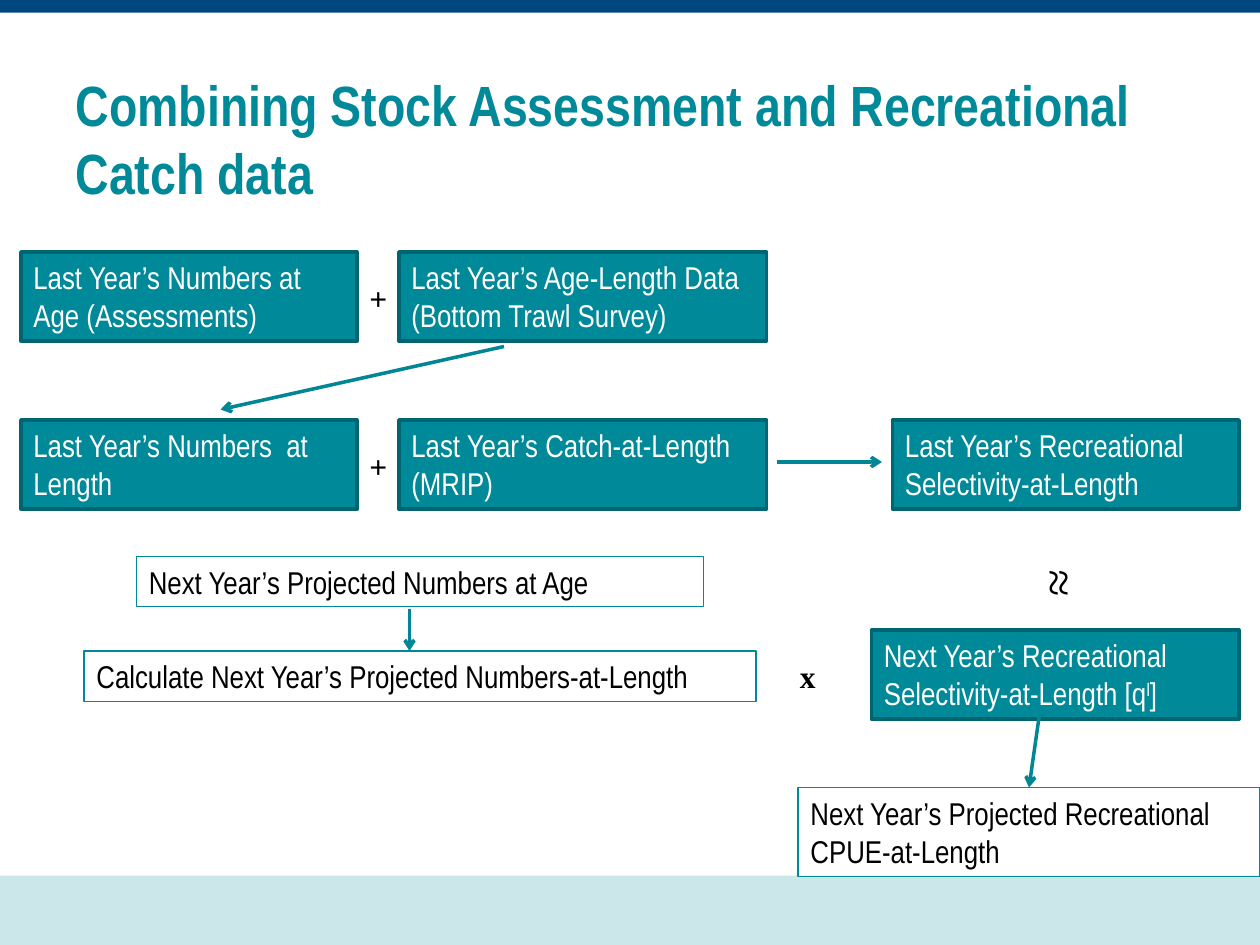
from dataclasses import dataclass

from lxml import etree
from pptx import Presentation
from pptx import util as u
from pptx.dml.color import RGBColor
from pptx.enum import shapes, text
from pptx.oxml import ns

COLS, ROWS = 120, 90
TALL, SHORT = 8.5, 4.8


@dataclass(frozen=True)
class Theme:
    teal: str = "008998"
    edge: str = "006570"
    arrow: str = "008695"
    navy: str = "00467F"
    pale: str = "CCE7EA"
    white: str = "FFFFFF"
    black: str = "000000"
    sans: str = "Arial Narrow"
    serif: str = "Times New Roman"
    title: float = 32.4
    body: float = 18
    symbol: float = 28


T = Theme()


def grid(prs, *cells):
    units = (prs.slide_width / COLS, prs.slide_height / ROWS)
    return [round(c * units[i % 2]) for i, c in enumerate(cells)]


def write(sp, content, size=T.body, font=T.sans, color=T.black, bold=False,
          align=text.PP_ALIGN.LEFT, wrap=True):
    tf = sp.text_frame
    tf.word_wrap = wrap
    tf.vertical_anchor = text.MSO_ANCHOR.TOP
    for i, line in enumerate(content.split("\n")):
        p = tf.paragraphs[0] if i == 0 else tf.add_paragraph()
        p.alignment = align
        for j, part in enumerate(line.split("^")):
            r = p.add_run()
            r.text = part
            r.font.size, r.font.name, r.font.bold = u.Pt(size), font, bold
            r.font.color.rgb = RGBColor.from_string(color)
            if j % 2:
                r._r.get_or_add_rPr().set("baseline", "30000")


def add_rect(prs, s, cells, fill=None, line=None, width=0.75):
    sp = s.shapes.add_shape(shapes.MSO_SHAPE.RECTANGLE, *grid(prs, *cells))
    sp.shadow.inherit = False
    if fill:
        sp.fill.solid()
        sp.fill.fore_color.rgb = RGBColor.from_string(fill)
    else:
        sp.fill.background()
    if line:
        sp.line.color.rgb = RGBColor.from_string(line)
        sp.line.width = u.Pt(width)
    else:
        sp.line.fill.background()
    return sp


def add_data_box(prs, s, content, x, y, w):
    sp = add_rect(prs, s, (x, y, w, TALL), T.teal, T.edge, 2)
    write(sp, content, color=T.white)
    return sp


def add_projection(prs, s, content, x, y, w, h=SHORT):
    sp = add_rect(prs, s, (x, y, w, h), line=T.teal)
    write(sp, content)
    return sp


def add_symbol(prs, s, content, x, y, w, h=SHORT, rotation=0, **fmt):
    sp = s.shapes.add_textbox(*grid(prs, x, y, w, h))
    sp.rotation = rotation
    write(sp, content, font=T.serif, **fmt)


def add_arrow(prs, s, x1, y1, x2, y2):
    c = s.shapes.add_connector(shapes.MSO_CONNECTOR.STRAIGHT,
                               *grid(prs, x1, y1, x2, y2))
    c.line.color.rgb = RGBColor.from_string(T.arrow)
    c.line.width = u.Pt(2)
    etree.SubElement(c.line._get_or_add_ln(), ns.qn("a:tailEnd"), type="arrow")
    etree.SubElement(c._element.spPr, ns.qn("a:effectLst"))
    return c


def add_title(prs, s, content):
    sp = s.shapes.title
    sp.left, sp.top, sp.width, sp.height = grid(prs, 6, 6, 108, 8.9)
    write(sp, content, size=T.title, color=T.teal, bold=True)
    sp.text_frame.auto_size = text.MSO_AUTO_SIZE.NONE


def main():
    prs = Presentation()
    prs.slide_width, prs.slide_height = u.Inches(10), u.Inches(7.5)
    s = prs.slides.add_slide(prs.slide_layouts[5])

    add_rect(prs, s, (0, 83.4, COLS, 6.6), T.pale)
    add_rect(prs, s, (0, 0, COLS, 1.2), T.navy)
    add_title(prs, s, "Combining Stock Assessment and Recreational Catch data")

    pairs = [
        (24, "Last Year’s Numbers at Age (Assessments)",
         "Last Year’s Age-Length Data\n(Bottom Trawl Survey)"),
        (40, "Last Year’s Numbers  at Length",
         "Last Year’s Catch-at-Length (MRIP)"),
    ]
    for y, left, right in pairs:
        add_data_box(prs, s, left, 2, y, 32)
        add_symbol(prs, s, "+", 34, y + 2, 7, bold=True)
        add_data_box(prs, s, right, 38, y, 35)
    add_data_box(prs, s, "Last Year’s Recreational Selectivity-at-Length", 85, 40, 33)
    add_data_box(prs, s, "Next Year’s Recreational Selectivity-at-Length [q^l^]", 83, 60, 35)

    add_projection(prs, s, "Next Year’s Projected Numbers at Age", 13, 53, 54)
    add_projection(prs, s, "Calculate Next Year’s Projected Numbers-at-Length", 8, 62, 64)
    catch = add_projection(prs, s, "Next Year’s Projected Recreational CPUE-at-Length",
                           76, 75, 44, TALL)

    add_symbol(prs, s, "≈", 97, 51.1, 7, 6.8, rotation=270, size=T.symbol)
    add_symbol(prs, s, "x", 75, 62, 4, bold=True, wrap=False)

    for ends in [(48, 33, 21, 39), (74, 44, 84, 44), (39, 58, 39, 62)]:
        add_arrow(prs, s, *ends)
    add_arrow(prs, s, 99, 68, 98, 75).end_connect(catch, 0)

    prs.save("out.pptx")


if __name__ == "__main__":
    main()
